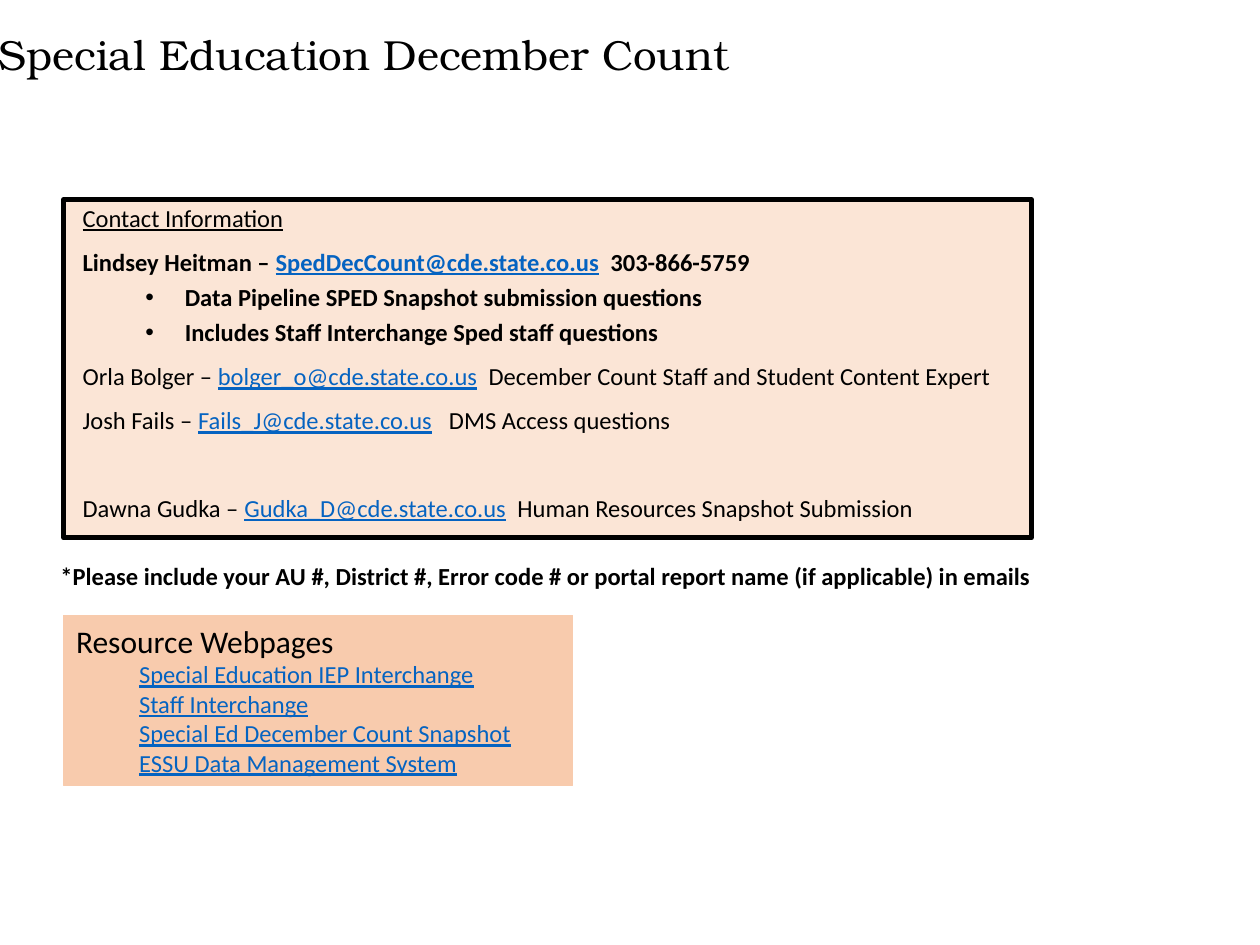
"""Build the contacts slide for the Special Education December Count."""
from dataclasses import dataclass

from lxml.etree import SubElement
from pptx import Presentation
from pptx.dml.color import RGBColor as RGB
from pptx.enum.shapes import MSO_SHAPE as SHAPE
from pptx.enum.text import MSO_ANCHOR as ANCHOR, MSO_AUTO_SIZE as FIT, PP_ALIGN as ALIGN
from pptx.oxml.ns import qn
from pptx.util import Pt


@dataclass(frozen=True)
class Theme:
    title_font: str = "TeX Gyre Bonum"
    font: str = "Calibri"
    title: int = 24
    heading: int = 18
    body: int = 14
    text: RGB = RGB(0, 0, 0)
    link: RGB = RGB(0x05, 0x63, 0xC1)
    contact_fill: RGB = RGB(0xFB, 0xE5, 0xD6)
    resource_fill: RGB = RGB(0xF8, 0xCB, 0xAD)


THEME = Theme()
TITLE = "Special Education December Count"
CONTACT_HEADING = "Contact Information"
CONTACTS = [
    {"name": "Lindsey Heitman", "email": "SpedDecCount@cde.state.co.us",
     "role": "303-866-5759", "gap": 3.2, "before": 10, "bold": True,
     "topics": ["Data Pipeline SPED Snapshot submission questions",
                "Includes Staff Interchange Sped staff questions"]},
    {"name": "Orla Bolger", "email": "bolger_o@cde.state.co.us",
     "role": "December Count Staff and Student Content Expert", "gap": 3.2, "before": 10},
    {"name": "Josh Fails", "email": "Fails_J@cde.state.co.us",
     "role": "DMS Access questions", "gap": 6.4, "before": 10},
    {"name": "Dawna Gudka", "email": "Gudka_D@cde.state.co.us",
     "role": "Human Resources Snapshot Submission", "gap": 3.2, "before": 35},
]
NOTE = ("*Please include your AU #, District #, Error code # or portal report name "
        "(if applicable) in emails")
RESOURCE_HEADING = "Resource Webpages"
RESOURCES = ["Special Education IEP Interchange", "Staff Interchange",
             "Special Ed December Count Snapshot", "ESSU Data Management System"]

TITLE_BOX = (-31.5, 19.8, 478.8, 59.8)
CONTACT_BOX = (36.4, 114.2, 553, 193)
NOTE_BOX = (23.8, 317.2, 646.6, 24.5)
RESOURCE_BOX = (36.4, 351.6, 290.9, 97.2)


def place(s, box):
    s.left, s.top, s.width, s.height = map(Pt, box)


def paint(s, fill, line, width):
    s.fill.solid()
    s.fill.fore_color.rgb = fill
    s.line.color.rgb = line
    s.line.width = Pt(width)


def frame(s):
    tf = s.text_frame
    tf.word_wrap = True
    tf.auto_size = FIT.NONE
    tf.vertical_anchor = ANCHOR.TOP
    return tf


def add_run(p, text, size=THEME.body, font=THEME.font, color=THEME.text, bold=False, underline=False):
    r = p.add_run()
    r.text = text
    r.font.size, r.font.name = Pt(size), font
    r.font.color.rgb = color
    r.font.bold, r.font.underline = bold, underline
    return r


def add_link(p, text, bold=False):
    add_run(p, text, color=THEME.link, bold=bold, underline=True)


def add_gap(p, extra, bold=False):
    r = add_run(p, " ", bold=bold)
    r._r.get_or_add_rPr().set("spc", str(round(extra * 100)))


def add_line(tf, margin=0, hang=0, bullet=None, level=0, before=0, spacing=1.0):
    p = tf.paragraphs[0] if not tf.paragraphs[0].runs else tf.add_paragraph()
    ppr = p._p.get_or_add_pPr()
    ppr.set("marL", str(Pt(margin)))
    ppr.set("indent", str(Pt(-hang)))
    if bullet:
        SubElement(ppr, qn("a:buChar"), char=bullet)
    else:
        SubElement(ppr, qn("a:buNone"))
    p.level = level
    p.alignment = ALIGN.LEFT
    p.line_spacing, p.space_before, p.space_after = spacing, Pt(before), Pt(0)
    return p


def add_title(s):
    place(s, TITLE_BOX)
    tf = frame(s)
    tf.margin_left = tf.margin_right = tf.margin_top = tf.margin_bottom = 0
    p = tf.paragraphs[0]
    p.alignment, p.line_spacing = ALIGN.CENTER, 0.9
    add_run(p, TITLE, THEME.title, THEME.title_font)


def add_contacts(s):
    place(s, CONTACT_BOX)
    paint(s, THEME.contact_fill, THEME.text, 3)
    tf = frame(s)
    add_run(add_line(tf, margin=3.6, spacing=0.9), CONTACT_HEADING, underline=True)
    for contact in CONTACTS:
        bold = contact.get("bold", False)
        p = add_line(tf, margin=3.6, before=contact["before"], spacing=0.9)
        add_run(p, f"{contact['name']} – ", bold=bold)
        add_link(p, contact["email"], bold)
        add_gap(p, contact["gap"], bold)
        add_run(p, contact["role"], bold=bold)
        for topic in contact.get("topics", []):
            p = add_line(tf, margin=62, hang=22.5, bullet="•", level=1, before=5, spacing=0.9)
            add_run(p, topic, bold=bold)


def add_note(shapes):
    tf = frame(shapes.add_textbox(*map(Pt, NOTE_BOX)))
    add_run(add_line(tf, margin=3.6), NOTE, bold=True)


def add_resources(shapes):
    s = shapes.add_shape(SHAPE.RECTANGLE, *map(Pt, RESOURCE_BOX))
    s.shadow.inherit = False
    paint(s, THEME.resource_fill, THEME.resource_fill, 0.75)
    tf = frame(s)
    add_run(add_line(tf), RESOURCE_HEADING, THEME.heading)
    for resource in RESOURCES:
        add_link(add_line(tf, margin=36, level=1), resource)


def main():
    prs = Presentation()
    prs.slide_width, prs.slide_height = Pt(720), Pt(540)
    slide = prs.slides.add_slide(prs.slide_layouts[1])
    add_title(slide.shapes.title)
    add_contacts(slide.placeholders[1])
    add_note(slide.shapes)
    add_resources(slide.shapes)
    prs.save("out.pptx")


if __name__ == "__main__":
    main()
